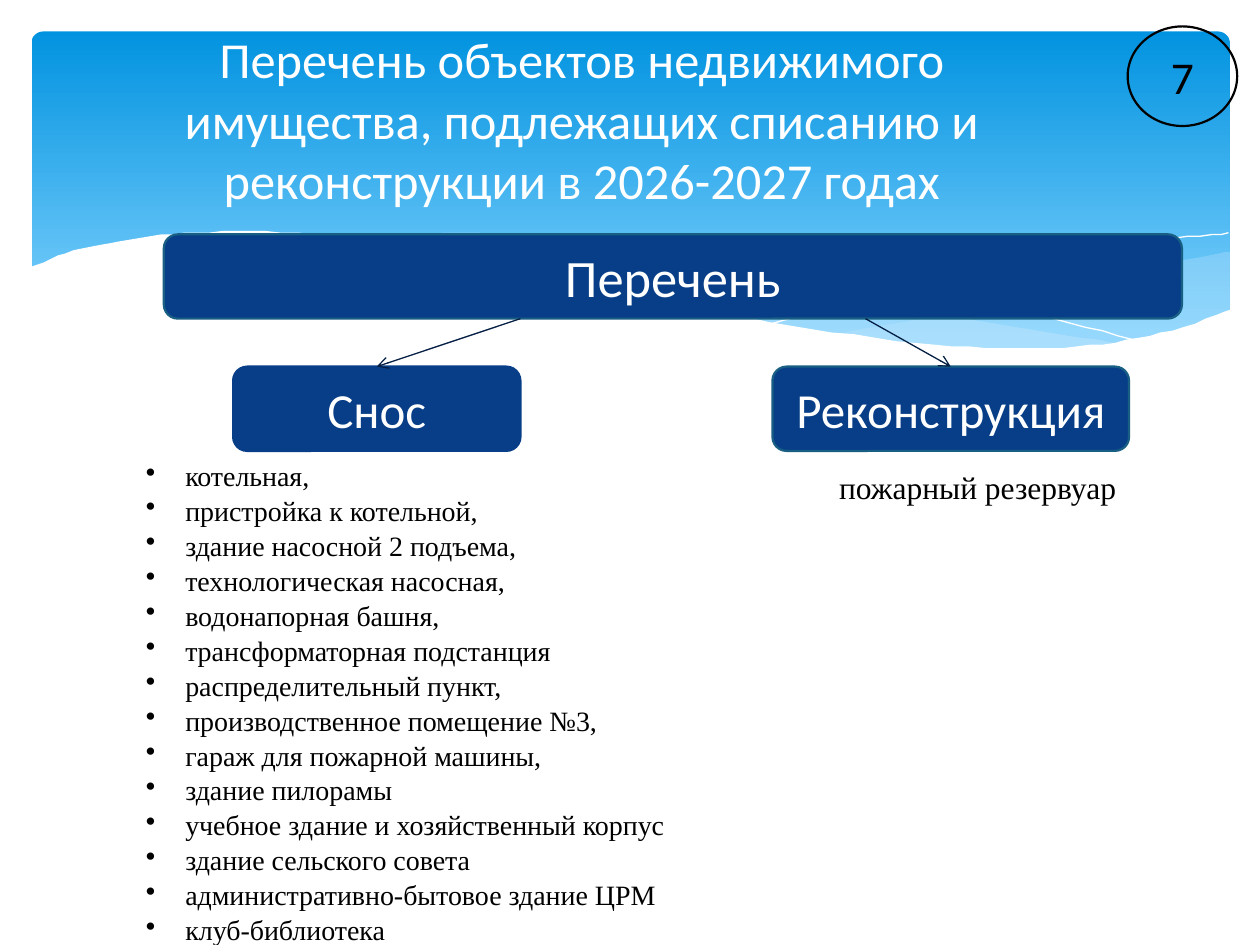
import pptx
import pptx.util
import pptx.dml.color
import pptx.enum.shapes
import pptx.enum.text
import pptx.oxml
import pptx.oxml.ns
from lxml import etree

Pt = pptx.util.Pt
SHAPE = pptx.enum.shapes.MSO_SHAPE
ALIGN = pptx.enum.text.PP_ALIGN
ANCHOR = pptx.enum.text.MSO_ANCHOR
qn = pptx.oxml.ns.qn

COLORS = {
    "white": "FFFFFF", "black": "000000", "navy": "073E87", "teal": "195F84",
    "arrow": "041F44", "sky_top": "0293E0", "sky_bottom": "83D3FE", "mist": "C6E7FC",
}

RIGHT_SWELL = [
    [(684.7, 126), (655, 131), (602, 142.6), (524, 160.6), (458, 172.8)],
    [(458, 172.8), (500, 177.8), (544, 181.4), (583, 181.4), (622, 177.8),
     (655, 170.6), (684.7, 159.8)],
]
MIDDLE_BAND = [
    [(625, 178.6), (563, 169.2), (490, 154.8), (435, 141.8), (371.5, 128.2),
     (317, 119.5), (255.6, 115.2), (218, 116.6), (188, 119.5)],
    [(188, 119.5), (242.6, 128.2), (305, 141.8), (389.5, 160.6), (450, 172),
     (502, 179.3), (555, 182.2), (592.6, 181.4), (625, 178.6)],
]
FALLING_LINE = [(204.5, 122.4), (230, 118.8), (271, 116.6), (320, 118), (382, 123.8),
                (440, 131.8), (505.4, 144.7), (580, 162.7), (635, 177.8)]
RISING_LINE = [(423.4, 167), (482.4, 151.2), (541, 137.5), (605.5, 125.3),
               (647, 118.8), (684, 115.2)]
WHITE_WAVE = [
    [(685.4, 159), (651.6, 170.6), (612, 178.6), (564.5, 181.4), (505, 177.8),
     (433, 167.8), (363, 154), (304, 140.4), (245, 127.4), (192, 118.8),
     (134, 114.5), (87, 115.2), (50.4, 119.5), (19.4, 126.7), (-1.4, 135.4)],
    [(-1.4, 219), (685.4, 219)],
]

DEMOLITION = [
    "котельная,", "пристройка к котельной,", "здание насосной 2 подъема,",
    "технологическая насосная,", "водонапорная башня,", "трансформаторная подстанция",
    "распределительный пункт,", "производственное помещение №3,",
    "гараж для пожарной машины,", "здание пилорамы",
    "учебное здание и хозяйственный корпус", "здание сельского совета",
    "административно-бытовое здание ЦРМ", "клуб-библиотека",
]


def rgb(name):
    return pptx.dml.color.RGBColor.from_string(COLORS[name])


def write_text(shape, lines, size, font="Calibri", color="white", align=ALIGN.CENTER,
               anchor=ANCHOR.MIDDLE, indent=0, hanging=0, spacing=1.0, bullet=None):
    frame = shape.text_frame
    frame.word_wrap = True
    frame.auto_size = pptx.enum.text.MSO_AUTO_SIZE.NONE
    frame.vertical_anchor = anchor
    for number, line in enumerate(lines):
        para = frame.add_paragraph() if number else frame.paragraphs[0]
        para.text = line
        para.alignment = align
        para.line_spacing = spacing
        props = para._p.get_or_add_pPr()
        props.set("marL", str(Pt(hanging)))
        props.set("indent", str(Pt(indent - hanging)))
        if bullet:
            etree.SubElement(props, qn("a:buChar")).set("char", bullet)
        for span in para.runs:
            span.font.size = Pt(size)
            span.font.name = font
            span.font.color.rgb = rgb(color)


def smooth(knots, steps=6):
    ends = [knots[0], *knots, knots[-1]]
    points = [knots[0]]
    for a, b, c, d in zip(ends, ends[1:], ends[2:], ends[3:]):
        for step in range(1, steps + 1):
            t = step / steps
            points.append(tuple(
                q + t * ((r - p) + t * ((2 * p - 5 * q + 4 * r - s)
                                        + t * (3 * q - p - 3 * r + s))) / 2
                for p, q, r, s in zip(a, b, c, d)))
    return points


def add_wave(page, box, curves, fill=None, alpha=None):
    points = []
    for knots in curves:
        points += smooth(knots) if len(knots) > 2 else knots
    left, top = box[:2]
    points = [(left + x, top + y) for x, y in points]
    builder = page.shapes.build_freeform(*points[0], scale=Pt(1))
    builder.add_line_segments(points[1:], close=fill is not None)
    wave = builder.convert_to_shape()
    wave.shadow.inherit = False
    if fill is None:
        wave.fill.background()
        wave.line.color.rgb = rgb("white")
        wave.line.width = Pt(0)
        return
    wave.fill.solid()
    wave.fill.fore_color.rgb = rgb(fill)
    wave.line.fill.background()
    if alpha:
        tint = wave._element.spPr.find(qn("a:solidFill"))[0]
        etree.SubElement(tint, qn("a:alpha")).set("val", str(alpha * 1000))


def add_banner(page, box):
    panel = page.shapes.add_shape(SHAPE.ROUNDED_RECTANGLE, *map(Pt, box))
    panel.adjustments[0] = 0.034
    panel.shadow.inherit = False
    panel.line.fill.background()
    panel.fill.gradient()
    panel.fill.gradient_angle = 270
    for stop, (place, name) in zip(panel.fill.gradient_stops,
                                   [(0, "sky_top"), (0.9, "sky_bottom")]):
        stop.position = place
        stop.color.rgb = rgb(name)
    add_wave(page, box, RIGHT_SWELL, fill="mist", alpha=29)
    add_wave(page, box, MIDDLE_BAND, fill="mist", alpha=40)
    add_wave(page, box, [FALLING_LINE])
    add_wave(page, box, [RISING_LINE])
    add_wave(page, box, WHITE_WAVE, fill="white")


def add_title(page, box):
    title = page.shapes.title
    title.left, title.top, title.width, title.height = map(Pt, box)
    page.shapes._spTree.append(title._element)
    write_text(title, ["Перечень объектов недвижимого\vимущества, подлежащих списанию и "
                       "реконструкции в 2026-2027 годах"], 28.8)


def add_node(page, box, label, size, kind=SHAPE.FLOWCHART_ALTERNATE_PROCESS,
             fill="navy", line="teal", color="white"):
    node = page.shapes.add_shape(kind, *map(Pt, box))
    node.shadow.inherit = False
    if fill:
        node.fill.solid()
        node.fill.fore_color.rgb = rgb(fill)
    else:
        node.fill.background()
    node.line.color.rgb = rgb(line)
    node.line.width = Pt(1.25)
    write_text(node, [label], size, color=color)


def add_arrow(page, start, end):
    arrow = page.shapes.add_connector(pptx.enum.shapes.MSO_CONNECTOR.STRAIGHT,
                                      *map(Pt, start + end))
    arrow.line.color.rgb = rgb("arrow")
    arrow.line.width = Pt(0.75)
    etree.SubElement(arrow.line._get_or_add_ln(), qn("a:tailEnd")).set("type", "arrow")
    etree.SubElement(arrow._element.spPr, qn("a:effectLst"))


def add_tree(page, box):
    left, top, width, height = box
    node_height = 48.2
    branch_top = top + height - node_height
    root_bottom = top + node_height
    add_node(page, (left, top, width, node_height), "Перечень", 30)
    branches = [("Снос", 39.6, 164.2, "navy", 203.8),
                ("Реконструкция", 347.8, 203.8, "teal", 401)]
    for label, offset, branch_width, line, start in branches:
        add_node(page, (left + offset, branch_top, branch_width, node_height),
                 label, 28, line=line)
        add_arrow(page, (left + start, root_bottom),
                  (left + offset + branch_width / 2, branch_top))


def add_note(page, box, lines, size, **layout):
    note = page.shapes.add_textbox(*map(Pt, box))
    write_text(note, lines, size, font="Times New Roman", color="black",
               align=ALIGN.JUSTIFY, anchor=ANCHOR.TOP, **layout)


def main():
    deck = pptx.Presentation()
    deck.slide_width, deck.slide_height = Pt(720), Pt(540)
    page = deck.slides.add_slide(deck.slide_layouts[5])
    add_banner(page, (18, 18, 684.7, 194.4))
    add_title(page, (8.6, 13, 648, 110.2))
    add_tree(page, (93.6, 133.9, 581.8, 123.8))
    add_node(page, (644.4, 15.1, 62.6, 56.9), "7", 26, kind=SHAPE.OVAL,
             fill=None, line="black", color="black")
    add_note(page, (437, 264.2, 216.7, 28.8), ["пожарный резервуар"], 18, indent=35.4)
    add_note(page, (76.3, 257.8, 362.9, 278.6), DEMOLITION, 16,
             hanging=22.5, spacing=1.04, bullet="•")
    deck.save("out.pptx")


if __name__ == "__main__":
    main()
